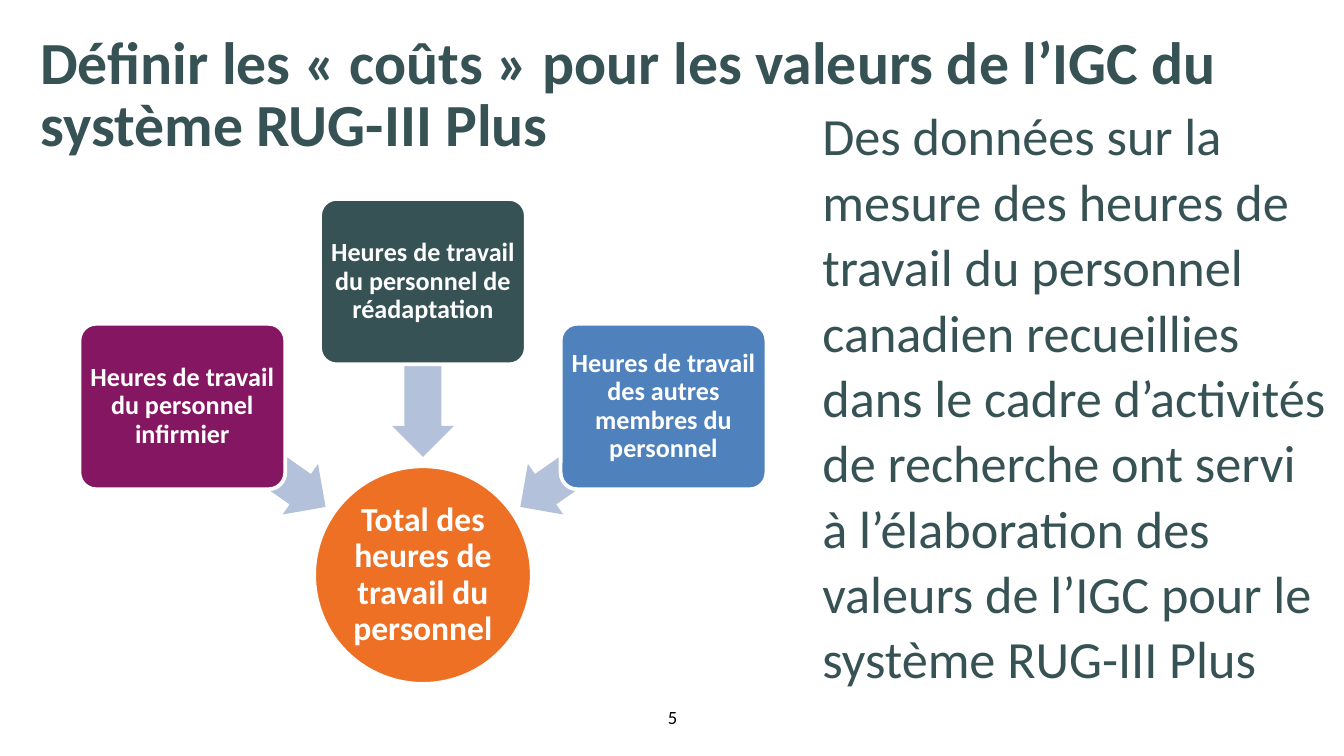
"""Build the slide on staff time behind the RUG-III Plus cost weights."""
from pptx import Presentation
from pptx.dml.color import RGBColor
from pptx.enum import shapes, text
from pptx.util import Pt

WHITE = RGBColor(0xFF, 0xFF, 0xFF)
BLACK = RGBColor(0x00, 0x00, 0x00)
SLATE = RGBColor(0x36, 0x52, 0x54)
PLUM = RGBColor(0x85, 0x17, 0x62)
BLUE = RGBColor(0x4F, 0x81, 0xBD)
ORANGE = RGBColor(0xED, 0x70, 0x24)
PALE_BLUE = RGBColor(0xB3, 0xC1, 0xDB)

CENTER = 226.6
STEP = 128.9
CARD_WIDTH, CARD_HEIGHT = 110.2, 88.6
ARROW_WIDTH, ARROW_HEIGHT = 93.6, 33.1
TOTAL_SIZE = 116.6

SOURCES = [
    (-1, 173.5, PLUM, "Heures de travail du personnel infirmier", 136.1, 228.2, 215),
    (0, 106.6, SLATE, "Heures de travail du personnel de réadaptation", CENTER, 181.4, 270),
    (1, 173.5, BLUE, "Heures de travail des autres membres du personnel", 317.1, 228.2, 325),
]


class SlideBuilder:
    """Hold the style and the current slide."""

    font_name = "Calibri"

    def __init__(self, presentation):
        self.slide = presentation.slides.add_slide(presentation.slide_layouts[5])

    def set_text(self, shape, content, size, color, bold=False, inset=0, spacing=None,
                 align=text.PP_ALIGN.LEFT, anchor=text.MSO_ANCHOR.MIDDLE):
        frame = shape.text_frame
        frame.text = content
        frame.word_wrap = True
        frame.auto_size = text.MSO_AUTO_SIZE.NONE
        frame.vertical_anchor = anchor
        frame.margin_left = frame.margin_right = Pt(inset)
        frame.margin_top = frame.margin_bottom = Pt(inset / 2)
        paragraph = frame.paragraphs[0]
        paragraph.alignment = align
        paragraph.line_spacing = spacing
        font = paragraph.runs[0].font
        font.name, font.size, font.bold = self.font_name, Pt(size), bold
        font.color.rgb = color

    def title(self, content, left, top, width, height):
        shape = self.slide.shapes.title
        shape.left, shape.top, shape.width, shape.height = map(Pt, (left, top, width, height))
        self.set_text(shape, content, 32, SLATE, True, 7.2, Pt(33), anchor=text.MSO_ANCHOR.TOP)

    def text_box(self, content, left, top, width, height, size, color, **style):
        shape = self.slide.shapes.add_textbox(*map(Pt, (left, top, width, height)))
        self.set_text(shape, content, size, color, **style)

    def shape(self, kind, left, top, width, height, fill, outlined=True):
        shape = self.slide.shapes.add_shape(kind, *map(Pt, (left, top, width, height)))
        shape.shadow.inherit = False
        shape.fill.solid()
        shape.fill.fore_color.rgb = fill
        if outlined:
            shape.line.color.rgb = WHITE
            shape.line.width = Pt(2)
        else:
            shape.line.fill.background()
        return shape

    def arrow(self, center, top, rotation):
        shape = self.shape(shapes.MSO_SHAPE.LEFT_ARROW, center - ARROW_WIDTH / 2, top,
                           ARROW_WIDTH, ARROW_HEIGHT, PALE_BLUE, outlined=False)
        shape.adjustments[0], shape.adjustments[1] = 0.6, 0.5
        shape.rotation = rotation

    def card(self, center, top, fill, content):
        shape = self.shape(shapes.MSO_SHAPE.ROUNDED_RECTANGLE, center - CARD_WIDTH / 2, top,
                           CARD_WIDTH, CARD_HEIGHT, fill)
        shape.adjustments[0] = 0.1
        self.set_text(shape, content, 14, WHITE, True, 2, 0.9, text.PP_ALIGN.CENTER)

    def total(self, center, top, content):
        shape = self.shape(shapes.MSO_SHAPE.OVAL, center - TOTAL_SIZE / 2, top,
                           TOTAL_SIZE, TOTAL_SIZE, ORANGE)
        self.set_text(shape, content, 18, WHITE, True, 1, 0.9, text.PP_ALIGN.CENTER)


def main():
    presentation = Presentation()
    presentation.slide_width, presentation.slide_height = Pt(720), Pt(405)
    builder = SlideBuilder(presentation)
    builder.title("Définir les « coûts » pour les valeurs de l’IGC du système RUG-III Plus",
                  14.4, 15.1, 669.6, 67)
    builder.text_box(
        "Des données sur la mesure des heures de travail du personnel canadien recueillies "
        "dans le cadre d’activités de recherche ont servi à l’élaboration des valeurs de "
        "l’IGC pour le système RUG-III Plus",
        440.6, 52.6, 272.2, 318.2, 28, SLATE, spacing=Pt(35))
    builder.total(CENTER, 249.8, "Total des heures de travail du personnel")
    for column, top, fill, content, arrow_center, arrow_top, rotation in SOURCES:
        builder.arrow(arrow_center, arrow_top, rotation)
        builder.card(CENTER + column * STEP, top, fill, content)
    builder.text_box("5", 337.7, 378, 45.4, 12.2, 10, BLACK, align=text.PP_ALIGN.CENTER)
    presentation.save("out.pptx")


if __name__ == "__main__":
    main()
